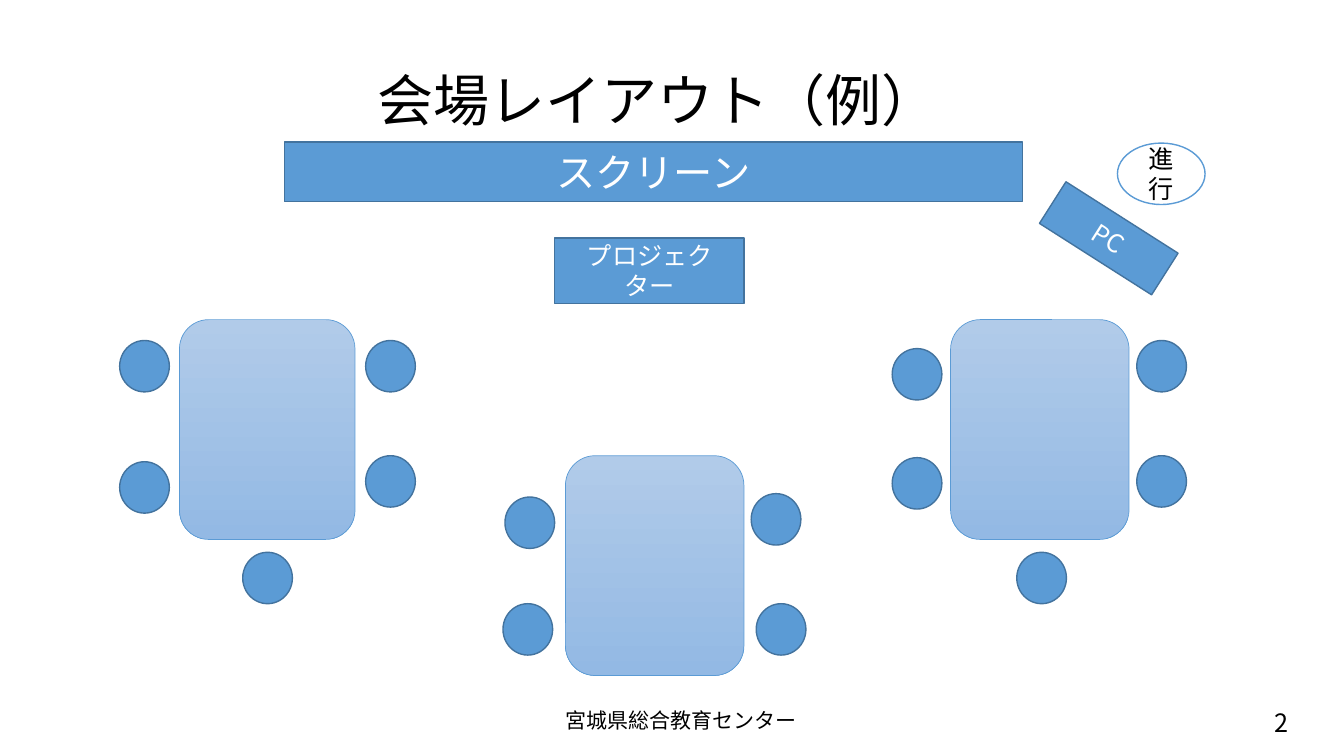
from lxml.etree import SubElement
from pptx import Presentation
from pptx.dml.color import RGBColor
from pptx.enum.shapes import MSO_SHAPE
from pptx.enum.text import MSO_ANCHOR, MSO_AUTO_SIZE, PP_ALIGN
from pptx.oxml.ns import qn
from pptx.util import Pt

FONT = "Noto Sans CJK JP"
BLUE, EDGE, WHITE, BLACK = "5B9BD5", "43739E", "FFFFFF", "000000"
TABLE_TOP, TABLE_BOTTOM = "B1CBE9", "93B9E4"
CHAIR_WIDTH, CHAIR_HEIGHT = 35.5, 36.7

TABLES = [(128.2, 228.3, 125.4), (679, 228.3, 127.5), (403.9, 325.5, 127.5)]
TABLE_HEIGHT = 157
CHAIRS = [
    (85.5, 243.2), (85.5, 329.8), (261.2, 243.2), (261.2, 325.5), (173.4, 394.5),
    (360.7, 355), (359.3, 431.2), (536.6, 352.6), (540.2, 431.2),
    (812, 243.2), (637.3, 249), (637.3, 326.9), (812, 325.5), (726.3, 394.5),
]


def color(value):
    return RGBColor.from_string(value)


class Page:
    def __init__(self, deck):
        self.shapes = deck.slides.add_slide(deck.slide_layouts[6]).shapes

    def set_text(self, box, text, size, text_color, align, anchor):
        frame = box.text_frame
        frame.word_wrap = True
        frame.vertical_anchor = anchor
        para = frame.paragraphs[0]
        para.text = text
        para.alignment = align
        para.font.name = FONT
        para.font.size = Pt(size)
        para.font.color.rgb = color(text_color)
        defaults = para._p.get_or_add_pPr().find(qn("a:defRPr"))
        SubElement(defaults, qn("a:ea")).set("typeface", FONT)
        return para

    def text(self, left, top, width, height, text, size,
             align=PP_ALIGN.LEFT, anchor=MSO_ANCHOR.TOP):
        box = self.shapes.add_textbox(Pt(left), Pt(top), Pt(width), Pt(height))
        box.text_frame.auto_size = MSO_AUTO_SIZE.NONE
        return self.set_text(box, text, size, BLACK, align, anchor)

    def shape(self, kind, left, top, width, height, fill=BLUE, line=EDGE, line_width=1):
        shape = self.shapes.add_shape(kind, Pt(left), Pt(top), Pt(width), Pt(height))
        shape.shadow.inherit = False
        shape.fill.solid()
        shape.fill.fore_color.rgb = color(fill)
        shape.line.color.rgb = color(line)
        shape.line.width = Pt(line_width)
        return shape

    def label(self, shape, text, size, text_color=WHITE):
        self.set_text(shape, text, size, text_color, PP_ALIGN.CENTER, MSO_ANCHOR.MIDDLE)

    def table(self, left, top, width):
        table = self.shape(MSO_SHAPE.ROUNDED_RECTANGLE, left, top, width, TABLE_HEIGHT,
                           line=BLUE, line_width=0.5)
        table.fill.gradient()
        table.fill.gradient_angle = 270
        for stop, shade in zip(table.fill.gradient_stops, (TABLE_TOP, TABLE_BOTTOM)):
            stop.color.rgb = color(shade)

    def chair(self, left, top):
        self.shape(MSO_SHAPE.OVAL, left, top, CHAIR_WIDTH, CHAIR_HEIGHT)


def main():
    deck = Presentation()
    deck.slide_width, deck.slide_height = Pt(960), Pt(540)
    page = Page(deck)

    page.text(396.7, 501.8, 180, 25.2, "宮城県総合教育センター", 15)
    page.text(903.6, 501.8, 51.1, 29, "2", 18)
    title = page.text(25.2, 27.4, 889.2, 63.4, "会場レイアウト（例）", 40,
                      PP_ALIGN.CENTER, MSO_ANCHOR.MIDDLE)
    title.line_spacing = 1.5
    title.space_before = Pt(10)

    screen = page.shape(MSO_SHAPE.RECTANGLE, 203.2, 101.4, 527, 42.8)
    page.label(screen, "スクリーン", 28)

    for table in TABLES:
        page.table(*table)
    for chair in CHAIRS:
        page.chair(*chair)

    projector = page.shape(MSO_SHAPE.RECTANGLE, 396, 169.9, 135.6, 46.9)
    page.label(projector, "プロジェクター", 18)

    computer = page.shape(MSO_SHAPE.RECTANGLE, 744.5, 152.6, 95, 35.3)
    computer.rotation = 32.5
    page.label(computer, "PC", 18)

    host = page.shape(MSO_SHAPE.OVAL, 798.2, 102.2, 62.6, 43.9, fill=WHITE, line=BLUE)
    page.label(host, "進行", 18, BLACK)

    deck.save("out.pptx")


if __name__ == "__main__":
    main()
